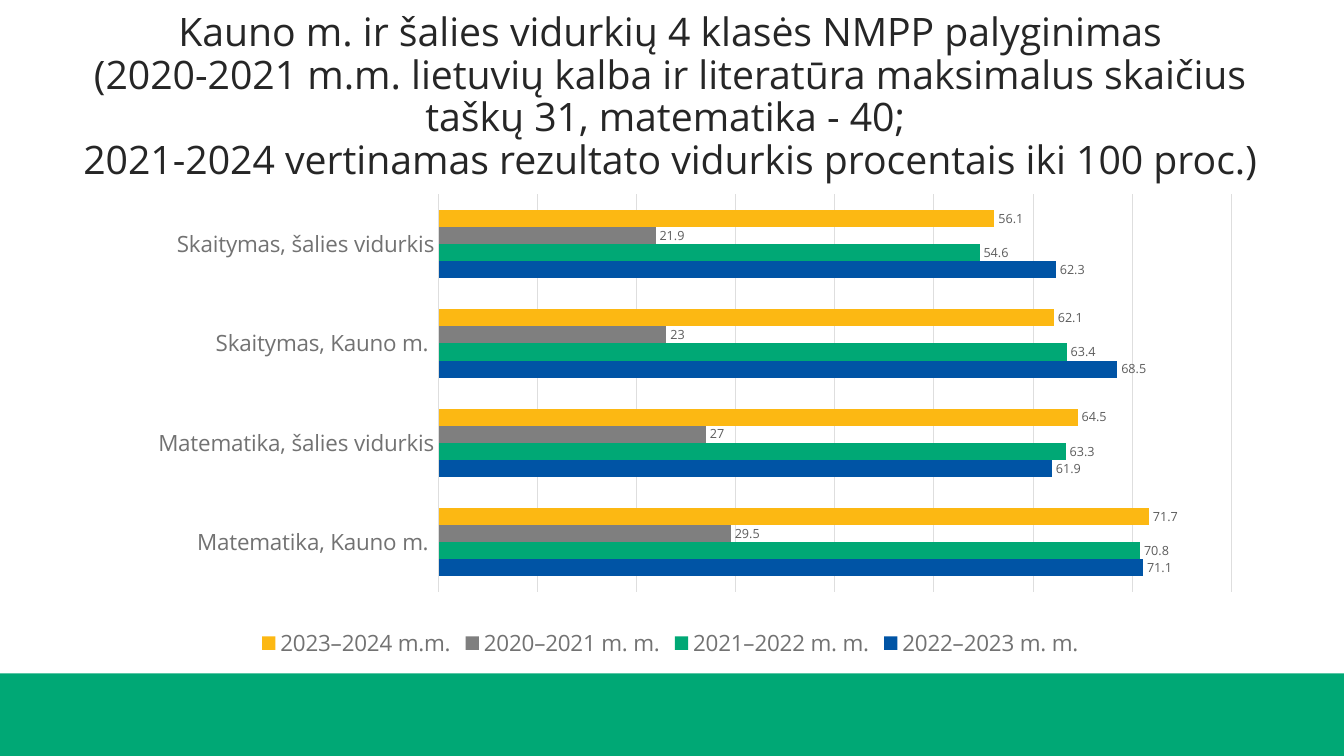
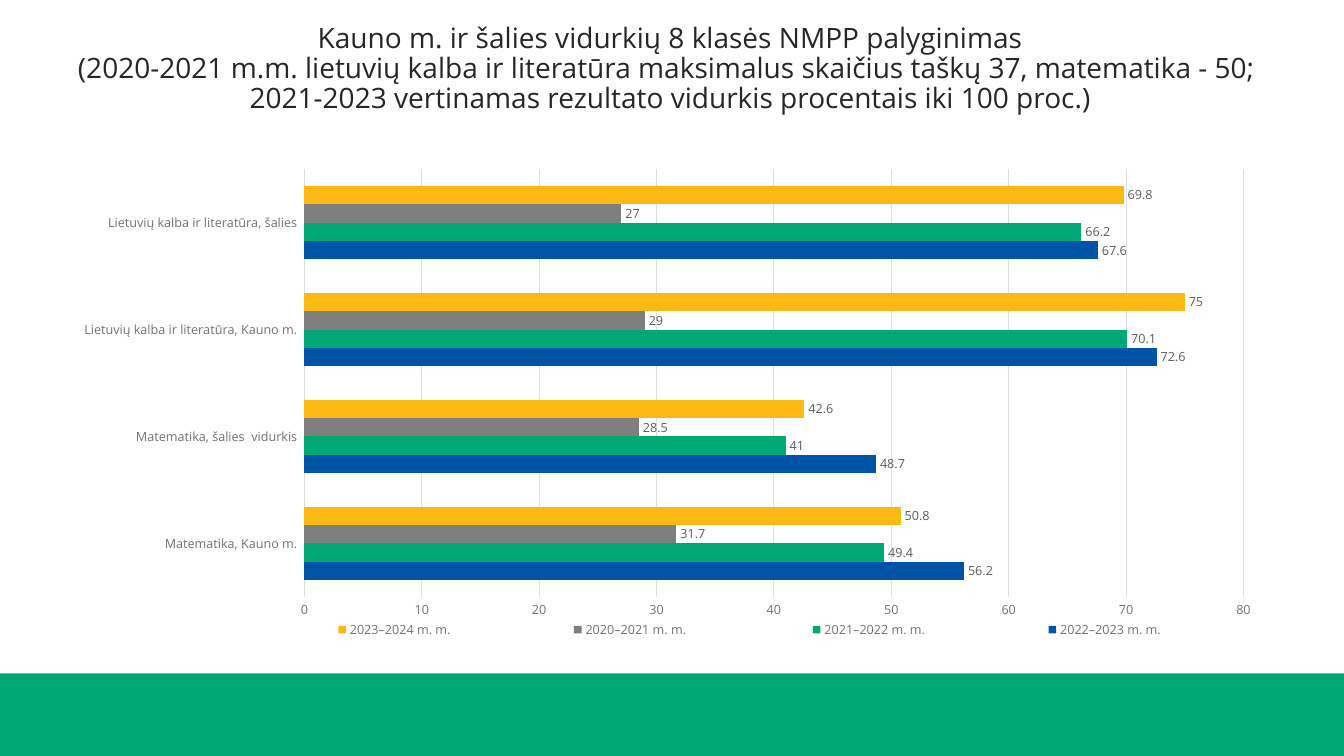
from dataclasses import dataclass
from typing import Optional

from lxml.etree import SubElement
from pptx import Presentation
from pptx.chart.data import CategoryChartData
from pptx.dml.color import RGBColor
from pptx.enum.chart import (
    XL_CHART_TYPE as ChartType,
    XL_LABEL_POSITION as LabelPosition,
    XL_LEGEND_POSITION as LegendPosition,
    XL_TICK_MARK as TickMark,
)
from pptx.enum.shapes import MSO_SHAPE as Shape
from pptx.enum.text import MSO_ANCHOR as Anchor, PP_ALIGN as Align
from pptx.oxml.ns import qn
from pptx.util import Pt

# Shared style
FONT = "Open Sans"
GREEN = RGBColor(0x00, 0xA8, 0x75)
BLUE = RGBColor(0x00, 0x54, 0xA5)
GRAY = RGBColor(0x7F, 0x7F, 0x7F)
YELLOW = RGBColor(0xFC, 0xB8, 0x13)
TITLE_INK = RGBColor(0x26, 0x26, 0x26)
AXIS_INK = RGBColor(0x72, 0x72, 0x72)
LABEL_INK = RGBColor(0x5C, 0x5C, 0x5C)
GRID = RGBColor(0xDE, 0xDE, 0xDE)
SERIES_COLORS = (BLUE, GREEN, GRAY, YELLOW)

PAGE_WIDTH, PAGE_HEIGHT = 960, 540
BAND_TOP = 481
LEFT, WIDTH = 43.2, 871.2
TITLE_TOP = 21.6
CHART_TOP, CHART_HEIGHT = 113.8, 359.3


@dataclass(frozen=True)
class Area:
    """Fractions of the chart's width and height."""
    x: float
    y: float
    w: float
    h: float


@dataclass(frozen=True)
class ResultPage:
    title: tuple[str, ...]
    title_size: float
    title_height: float
    categories: tuple[str, ...]
    series: dict[str, tuple[float, ...]]
    text_size: float
    show_values: bool
    plot_area: Area
    legend_area: Optional[Area] = None


PAGES = (
    ResultPage(
        title=(
            "Kauno m. ir šalies vidurkių 4 klasės NMPP palyginimas",
            "(2020-2021 m.m. lietuvių kalba ir literatūra maksimalus skaičius taškų 31, matematika - 40; ",
            "2021-2024 vertinamas rezultato vidurkis procentais iki 100 proc.)",
        ),
        title_size=28,
        title_height=112.3,
        categories=(
            "Matematika, Kauno m. ",
            " Matematika, šalies vidurkis",
            "Skaitymas, Kauno m. ",
            "Skaitymas, šalies vidurkis",
        ),
        series={
            "2022–2023 m. m.": (71.1, 61.9, 68.5, 62.3),
            "2021–2022 m. m.": (70.8, 63.3, 63.4, 54.6),
            "2020–2021 m. m.": (29.5, 27, 23, 21.9),
            "2023–2024 m.m.": (71.7, 64.5, 62.1, 56.1),
        },
        text_size=16,
        show_values=False,
        plot_area=Area(0.31, 0.07, 0.65, 0.79),
    ),
    ResultPage(
        title=(
            "Kauno m. ir šalies vidurkių 8 klasės NMPP palyginimas",
            "(2020-2021 m.m. lietuvių kalba ir literatūra maksimalus skaičius taškų 37, matematika - 50; ",
            "2021-2023 vertinamas rezultato vidurkis procentais iki 100 proc.)",
        ),
        title_size=20,
        title_height=64.1,
        categories=(
            "Matematika, Kauno m. ",
            "Matematika, šalies  vidurkis ",
            "Lietuvių kalba ir literatūra, Kauno m. ",
            "Lietuvių kalba ir literatūra, šalies ",
        ),
        series={
            "2022–2023 m. m.": (56.2, 48.7, 72.6, 67.6),
            "2021–2022 m. m.": (49.4, 41, 70.1, 66.2),
            "2020–2021 m. m. ": (31.7, 28.5, 29, 27),
            "2023–2024 m. m.": (50.8, 42.6, 75, 69.8),
        },
        text_size=9,
        show_values=True,
        plot_area=Area(0.2, 0.02, 0.77, 0.85),
        legend_area=Area(0.13, 0.91, 0.87, 0.05),
    ),
)


def style_font(font, size: float, color: RGBColor) -> None:
    font.name = FONT
    font.size = Pt(size)
    font.color.rgb = color


def place(element, area: Area, index: int, inner: bool = False) -> None:
    """Give a plot area or legend a fixed layout."""
    for old in element.findall(qn("c:layout")):
        element.remove(old)
    layout = SubElement(element, qn("c:layout"))
    element.insert(index, layout)
    manual = SubElement(layout, qn("c:manualLayout"))
    settings = {"layoutTarget": "inner"} if inner else {}
    settings |= {"xMode": "edge", "yMode": "edge",
                 "x": area.x, "y": area.y, "w": area.w, "h": area.h}
    for name, value in settings.items():
        SubElement(manual, qn(f"c:{name}")).set("val", str(value))


def add_band(page) -> None:
    band = page.shapes.add_shape(
        Shape.RECTANGLE, 0, Pt(BAND_TOP), Pt(PAGE_WIDTH), Pt(PAGE_HEIGHT - BAND_TOP))
    band.shadow.inherit = False
    band.fill.solid()
    band.fill.fore_color.rgb = GREEN
    band.line.fill.background()


def add_title(page, content: ResultPage) -> None:
    box = page.shapes.add_textbox(
        Pt(LEFT), Pt(TITLE_TOP), Pt(WIDTH), Pt(content.title_height))
    frame = box.text_frame
    frame.word_wrap = True
    frame.vertical_anchor = Anchor.BOTTOM
    para = frame.paragraphs[0]
    para.text = "\v".join(content.title)
    para.alignment = Align.CENTER
    para.line_spacing = 0.9
    for span in para.runs:
        style_font(span.font, content.title_size, TITLE_INK)


def add_result_chart(page, content: ResultPage) -> None:
    data = CategoryChartData()
    data.categories = content.categories
    for name, values in content.series.items():
        data.add_series(name, values)
    chart = page.shapes.add_chart(
        ChartType.BAR_CLUSTERED, Pt(LEFT), Pt(CHART_TOP),
        Pt(WIDTH), Pt(CHART_HEIGHT), data).chart
    chart.has_title = False
    style_font(chart.font, 10, TITLE_INK)

    # Bars and their values
    plot = chart.plots[0]
    plot.vary_by_categories = False
    plot.gap_width = 182
    plot.overlap = 0
    for series, color in zip(plot.series, SERIES_COLORS):
        series.format.fill.solid()
        series.format.fill.fore_color.rgb = color
        labels = series.data_labels
        labels.show_value = True
        labels.position = LabelPosition.OUTSIDE_END
        style_font(labels.font, 9, LABEL_INK)

    # Axes
    category_axis, value_axis = chart.category_axis, chart.value_axis
    for axis in (category_axis, value_axis):
        axis.major_tick_mark = axis.minor_tick_mark = TickMark.NONE
        style_font(axis.tick_labels.font, content.text_size, AXIS_INK)
    value_axis.minimum_scale, value_axis.maximum_scale = 0, 80
    value_axis.major_unit = 10
    value_axis.has_major_gridlines = True
    value_axis.format.line.fill.background()
    value_axis.visible = content.show_values
    for line in (category_axis.format.line, value_axis.major_gridlines.format.line):
        line.color.rgb = GRID
        line.width = Pt(0.75)

    # Legend and layout
    chart.has_legend = True
    legend = chart.legend
    legend.position = LegendPosition.BOTTOM
    legend.include_in_layout = False
    style_font(legend.font, content.text_size, AXIS_INK)
    plot_element = chart.element.find(f".//{qn('c:plotArea')}")
    place(plot_element, content.plot_area, 0, inner=True)
    if content.legend_area:
        legend_element = chart.element.find(f".//{qn('c:legend')}")
        place(legend_element, content.legend_area, 1)


def main() -> None:
    deck = Presentation()
    deck.slide_width, deck.slide_height = Pt(PAGE_WIDTH), Pt(PAGE_HEIGHT)
    for content in PAGES:
        page = deck.slides.add_slide(deck.slide_layouts[6])
        add_band(page)
        add_title(page, content)
        add_result_chart(page, content)
    deck.save("out.pptx")


if __name__ == "__main__":
    main()
